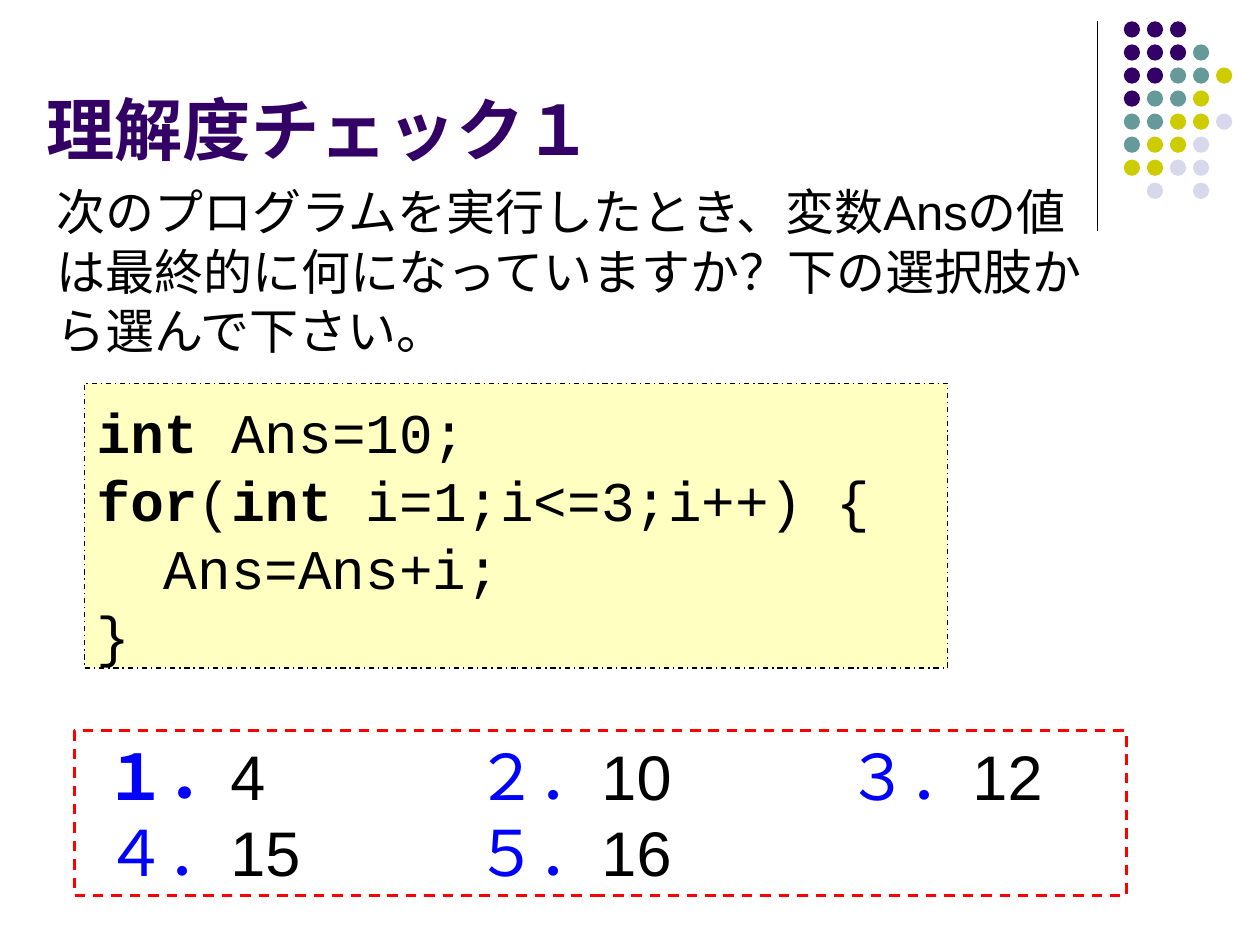
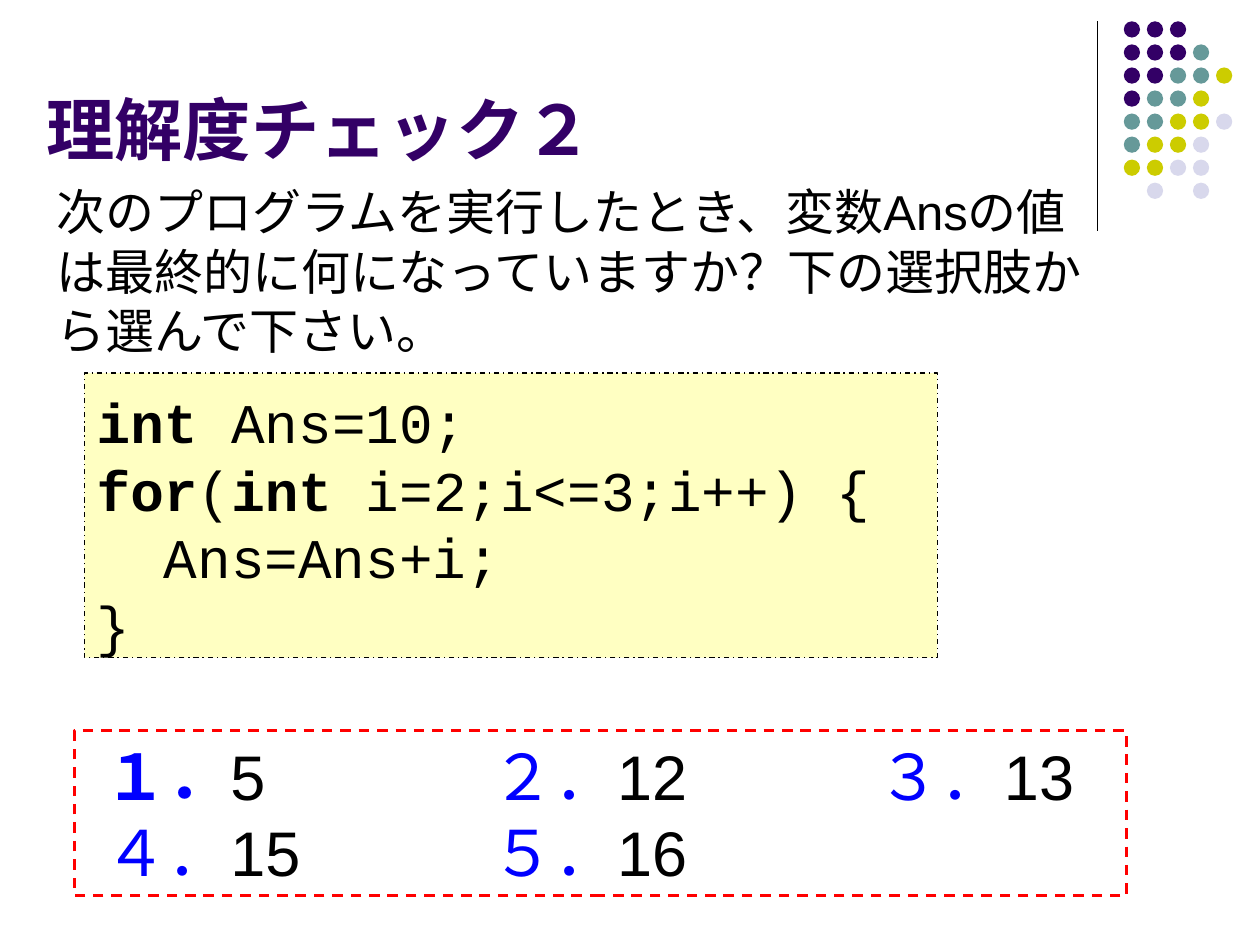
"""Build two quiz slides about the result of a for loop."""
from lxml import etree
from pptx import Presentation
from pptx.dml.color import RGBColor
from pptx.enum import dml, shapes, text
from pptx.oxml import ns
from pptx.util import Pt

PURPLE, BLACK, BLUE, RED, CREAM = "330066", "000000", "0000FF", "FF0000", "FFFFC2"
DOT_COLOURS = {"P": PURPLE, "T": "669999", "Y": "CCCC00", "L": "D8D8EC"}
DOT_ROWS = ["PPP", "PPPT", "PPTTY", "PTTY", "TTYYL", "TYYL", "YYLL", ".L.L"]
DOT_LEFT, DOT_TOP, DOT_STEP, DOT_SIZE = 642.2, 12.2, 13.17, 9.3
LINE_RATIO = 1.21
CODE_INDENT = 38.4
QUESTION = "次のプログラムを実行したとき、変数Ansの値は最終的に何になっていますか？下の選択肢から選んで下さい。"
QUIZZES = [
    {"title": "理解度チェック１", "start": 1, "code_at": (48.2, 219, 493.2, 162.7),
     "answers": [["4", "10", "12"], ["15", "16"]], "tab_step": 212},
    {"title": "理解度チェック２", "start": 2, "code_at": (48.2, 213.2, 487.4, 162.7),
     "answers": [["5", "12", "13"], ["15", "16"]], "tab_step": 221},
]


def colour(value):
    """Turn a hex string into a colour."""
    return RGBColor.from_string(value)


def add_span(para, words, size, tint=BLACK, bold=False, font="Arial"):
    """Append one formatted run to a paragraph."""
    span = para.add_run()
    span.text = words
    span.font.size, span.font.bold, span.font.name = Pt(size), bold, font
    span.font.color.rgb = colour(tint)
    asian = etree.SubElement(span.font._element, ns.qn("a:ea"))
    asian.set("typeface", font)


def next_para(frame, index, size):
    """Return the paragraph at an index, left aligned with a fixed line pitch."""
    para = frame.add_paragraph() if index else frame.paragraphs[0]
    para.alignment = text.PP_ALIGN.LEFT
    para.line_spacing = Pt(round(size * LINE_RATIO, 1))
    return para


def set_frame(box, left=7.2, top=3.6):
    """Set wrapping, anchor and insets of a text frame and return it."""
    frame = box.text_frame
    frame.word_wrap = True
    frame.auto_size = text.MSO_AUTO_SIZE.NONE
    frame.vertical_anchor = text.MSO_ANCHOR.TOP
    frame.margin_left, frame.margin_top = Pt(left), Pt(top)
    frame.margin_right, frame.margin_bottom = Pt(7.2), Pt(0)
    return frame


def add_plain_shape(page, kind, place, fill=None):
    """Add a shape with no shadow and no line."""
    shape = page.shapes.add_shape(kind, *map(Pt, place))
    shape.shadow.inherit = False
    shape.line.fill.background()
    if fill:
        shape.fill.solid()
        shape.fill.fore_color.rgb = colour(fill)
    else:
        shape.fill.background()
    return shape


def add_dashed_box(page, place, tint, width, dash, fill=None):
    """Add a rectangle with a dashed outline."""
    box = add_plain_shape(page, shapes.MSO_SHAPE.RECTANGLE, place, fill)
    box.line.color.rgb = colour(tint)
    box.line.width, box.line.dash_style = Pt(width), dash
    return box


def add_decoration(page):
    """Draw the vertical rule and the dot pattern."""
    rule = page.shapes.add_connector(
        shapes.MSO_CONNECTOR.STRAIGHT, Pt(627), Pt(12.2), Pt(627), Pt(131.8))
    rule.line.color.rgb, rule.line.width = colour(BLACK), Pt(0.75)
    etree.SubElement(rule._element.spPr, ns.qn("a:effectLst"))
    for row, letters in enumerate(DOT_ROWS):
        for column, letter in enumerate(letters):
            if letter in DOT_COLOURS:
                place = (DOT_LEFT + column * DOT_STEP, DOT_TOP + row * DOT_STEP,
                         DOT_SIZE, DOT_SIZE)
                add_plain_shape(page, shapes.MSO_SHAPE.OVAL, place, DOT_COLOURS[letter])


def add_title(page, words):
    """Place the title placeholder and fill it."""
    title = page.shapes.title
    title.left, title.top, title.width, title.height = map(Pt, (19.4, 43.2, 594, 56.9))
    frame = set_frame(title)
    frame.vertical_anchor, frame.margin_bottom = text.MSO_ANCHOR.BOTTOM, Pt(3.6)
    para = frame.paragraphs[0]
    para.alignment = text.PP_ALIGN.LEFT
    add_span(para, words, 39, PURPLE, True)


def add_answers(page, rows, tab_step):
    """List the numbered answers in columns set by tab stops."""
    box = add_dashed_box(page, (42.5, 417.6, 601.2, 94.3), RED, 1.5,
                         dml.MSO_LINE.DASH)
    frame = set_frame(box, left=17.2)
    numbers = iter("１２３４５")
    for index, row in enumerate(rows):
        para = next_para(frame, index, 36)
        stops = etree.SubElement(para._p.get_or_add_pPr(), ns.qn("a:tabLst"))
        for column in (1, 2):
            etree.SubElement(stops, ns.qn("a:tab"), pos=str(Pt(column * tab_step)), algn="l")
        for column, answer in enumerate(row):
            if column:
                add_span(para, "\t", 36)
            number = next(numbers)
            add_span(para, number + "．", 36, BLUE, number == "１")
            add_span(para, answer, 36)


def add_question(page):
    """Add the question text."""
    box = page.shapes.add_textbox(*map(Pt, (25.2, 100.1, 601.2, 108.7)))
    add_span(next_para(set_frame(box), 0, 28), QUESTION, 28)


def add_code(page, place, start):
    """Add the program listing with bold keywords."""
    box = add_dashed_box(page, place, BLACK, 0.75, dml.MSO_LINE.DASH_DOT, CREAM)
    frame = set_frame(box, top=8)
    lines = [
        (0, [("int ", True), ("Ans=10;", False)]),
        (0, [("for", True), ("(", False), ("int ", True), (f"i={start};i<=3;i++) {{", False)]),
        (CODE_INDENT, [("Ans=Ans+i;", False)]),
        (0, [("}", False)]),
    ]
    for index, (indent, parts) in enumerate(lines):
        para = next_para(frame, index, 32)
        para._p.get_or_add_pPr().set("marL", str(Pt(indent)))
        for words, bold in parts:
            add_span(para, words, 32, BLACK, bold, "Courier New")


def main():
    """Build and save the deck."""
    deck = Presentation()
    deck.slide_width, deck.slide_height = Pt(720), Pt(540)
    for quiz in QUIZZES:
        page = deck.slides.add_slide(deck.slide_layouts[5])
        add_decoration(page)
        add_title(page, quiz["title"])
        add_answers(page, quiz["answers"], quiz["tab_step"])
        add_question(page)
        add_code(page, quiz["code_at"], quiz["start"])
    deck.save("out.pptx")


if __name__ == "__main__":
    main()
